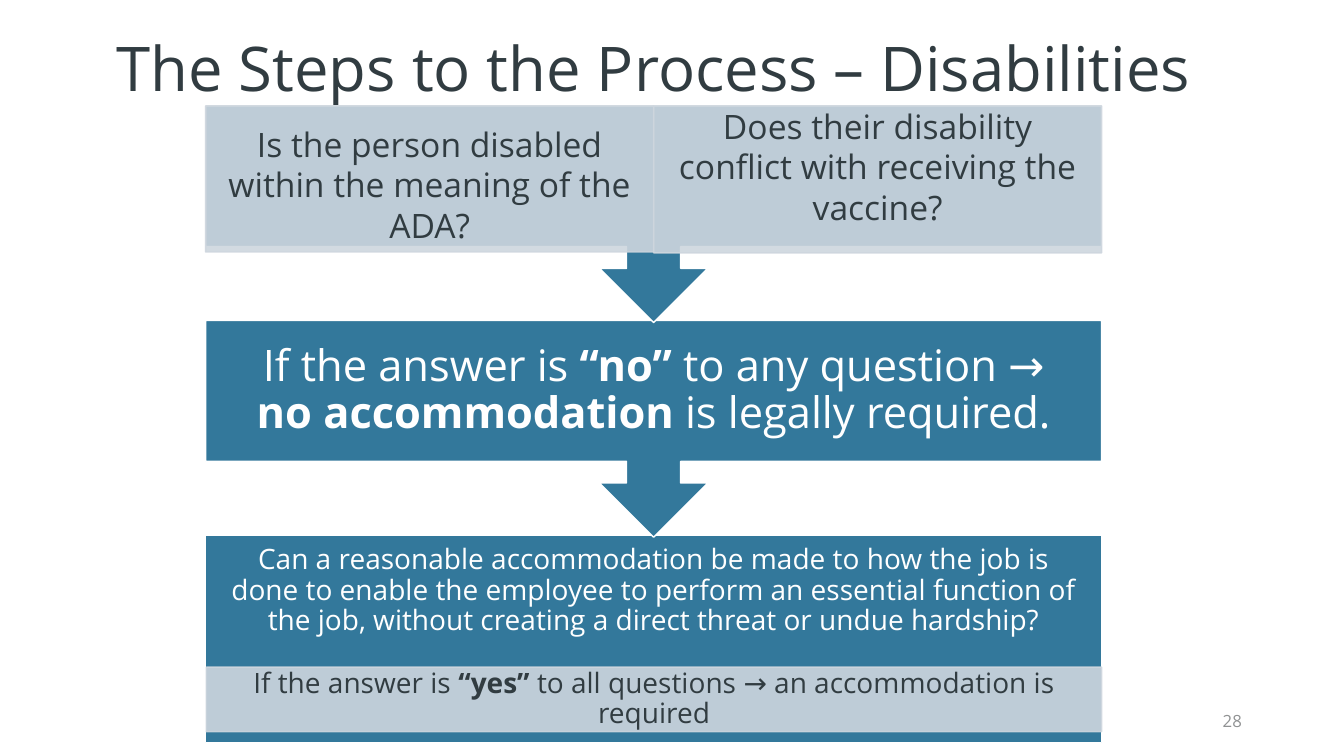
from lxml import etree
from pptx import Presentation
from pptx.dml.color import RGBColor
from pptx.enum.shapes import MSO_SHAPE
from pptx.enum.text import MSO_ANCHOR, MSO_AUTO_SIZE, PP_ALIGN
from pptx.oxml.ns import qn
from pptx.util import Pt

RECTANGLE = MSO_SHAPE.RECTANGLE
CALLOUT = MSO_SHAPE.DOWN_ARROW_CALLOUT
TOP, MIDDLE = MSO_ANCHOR.TOP, MSO_ANCHOR.MIDDLE
CENTER, RIGHT = PP_ALIGN.CENTER, PP_ALIGN.RIGHT

FONT = "Open Sans"
COLORS = {
    "ink": "313C41",
    "white": "FFFFFF",
    "blue": "33789B",
    "mist": "CED6DE",
    "number": "909293",
}

# The three steps share one column and follow at an equal pitch
LEFT, WIDTH = 146.9, 640
FIRST_TOP, PITCH = 75.6, 153.35
CALLOUT_HEIGHT, FINAL_HEIGHT = 154.8, 148.3
FINAL_TEXT_HEIGHT = 79.9


def color(name):
    return RGBColor.from_string(COLORS[name])


def set_text(box, spans, size, ink="ink", align=CENTER, anchor=MIDDLE,
             spacing=0.9, insets=(7.2, 3.6, 7.2, 3.6)):
    """Write (text, bold) spans as one paragraph; insets run left, top, right, bottom."""
    frame = box.text_frame
    frame.word_wrap = True
    frame.auto_size = MSO_AUTO_SIZE.NONE
    frame.vertical_anchor = anchor
    (frame.margin_left, frame.margin_top,
     frame.margin_right, frame.margin_bottom) = map(Pt, insets)
    paragraph = frame.paragraphs[0]
    paragraph.alignment = align
    paragraph.line_spacing = spacing
    for text, bold in spans:
        span = paragraph.add_run()
        span.text = text
        span.font.name = FONT
        span.font.size = Pt(size)
        span.font.bold = bold
        span.font.color.rgb = color(ink)


def add_panel(page, kind, left, top, width, height, fill, line, opacity=100):
    panel = page.shapes.add_shape(kind, Pt(left), Pt(top), Pt(width), Pt(height))
    panel.shadow.inherit = False
    panel.fill.solid()
    panel.fill.fore_color.rgb = color(fill)
    panel.line.color.rgb = color(line)
    panel.line.width = Pt(1)
    if opacity < 100:
        properties = panel.fill._xPr
        for tone in properties.iter(qn("a:srgbClr")):
            etree.SubElement(tone, qn("a:alpha")).set("val", str(opacity * 1000))
    return panel


def add_step(page, kind, index, height):
    return add_panel(page, kind, LEFT, FIRST_TOP + index * PITCH, WIDTH, height,
                     "blue", "white")


def add_strip(page, left, top, width, height):
    return add_panel(page, RECTANGLE, left, top, width, height, "mist", "mist", 90)


def main():
    deck = Presentation()
    deck.slide_width, deck.slide_height = Pt(960), Pt(540)
    page = deck.slides.add_slide(deck.slide_layouts[5])

    # Title
    title = page.shapes.title
    title.left, title.top, title.width, title.height = map(Pt, (46.8, 11.5, 841, 79.9))
    set_text(title, [("The Steps to the Process – Disabilities", False)], 44)

    # Final step, with its answer strip
    final = add_step(page, RECTANGLE, 2, FINAL_HEIGHT)
    set_text(final, [("Can a reasonable accommodation be made to how the job is done "
                      "to enable the employee to perform an essential function of the "
                      "job, without creating a direct threat or undue hardship?", False)],
             20, "white",
             insets=(11.5, 11.5, 11.5, FINAL_HEIGHT - FINAL_TEXT_HEIGHT + 11.5))
    answer = add_strip(page, LEFT + 0.5, 476.6, WIDTH - 0.5, 46.1)
    set_text(answer, [("If the answer is ", False), ("“yes”", True),
                      (" to all questions → an accommodation is required", False)],
             20, insets=(11.5, 2.2, 11.5, 2.2))

    # Middle step
    refusal = add_step(page, CALLOUT, 1, CALLOUT_HEIGHT)
    set_text(refusal, [("If the answer is ", False), ("“no”", True),
                       (" to any question → ", False), ("no accommodation", True),
                       (" is legally required.", False)],
             31, "white", insets=(17.3,) * 4)

    # First step, with two questions side by side
    add_step(page, CALLOUT, 0, CALLOUT_HEIGHT)
    questions = [
        ("Is the person disabled within the meaning of the ADA?", 104.4, 13),
        ("Does their disability conflict with receiving the vaccine?", 105.1, 0),
    ]
    for column, (question, height, top_inset) in enumerate(questions):
        strip = add_strip(page, LEFT + column * WIDTH / 2, FIRST_TOP, WIDTH / 2, height)
        set_text(strip, [(question, False)], 24, anchor=TOP, spacing=1.0,
                 insets=(13.7, top_inset, 13.7, 0))

    # Slide number
    number = page.shapes.add_textbox(Pt(678.2), Pt(500.4), Pt(216), Pt(28.8))
    set_text(number, [("28", False)], 12, "number", align=RIGHT, spacing=1.0)

    deck.save("out.pptx")


if __name__ == "__main__":
    main()
